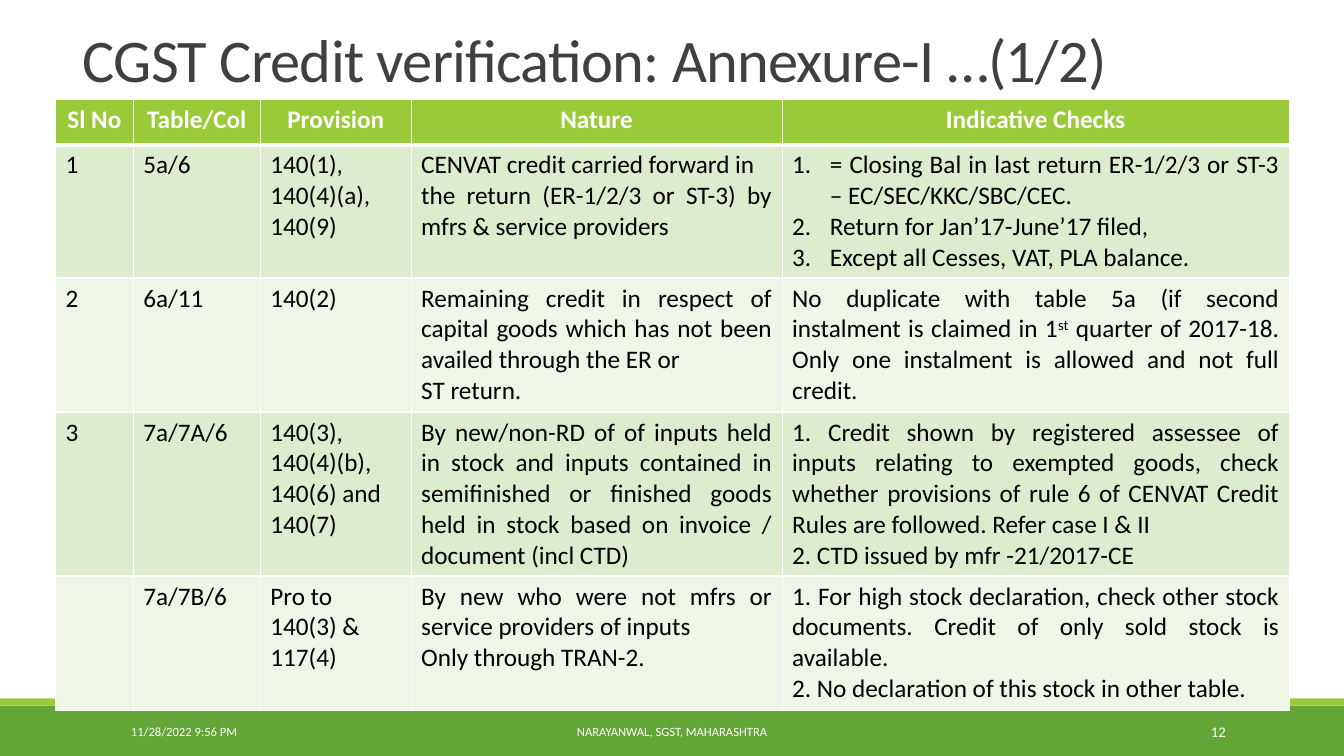
from lxml.etree import SubElement
from pptx import Presentation
from pptx.dml.color import RGBColor
from pptx.enum.shapes import MSO_SHAPE
from pptx.enum.text import MSO_ANCHOR, MSO_AUTO_SIZE, PP_ALIGN
from pptx.oxml.ns import qn
from pptx.util import Cm, Pt

COLORS = {
    "green": "63A537",
    "lime": "99CB38",
    "odd": "DEECCE",
    "even": "EFF6E8",
    "title": "404040",
    "black": "000000",
    "white": "FFFFFF",
}
FONT = "Calibri"
COL_WIDTHS = [1.96, 3.2, 3.8, 9.35, 12.78]
ROW_HEIGHTS = [1.14, 3.34, 3.38, 4.11, 3.38]
HEADERS = ["Sl No", "Table/Col", "Provision", "Nature", "Indicative Checks"]
NUMBERED = (1, 4)
ROWS = [
    ["1", "5a/6", "140(1),\n140(4)(a),\n140(9)",
     "CENVAT credit carried forward in\n"
     "the return (ER-1/2/3 or ST-3) by mfrs & service providers",
     "= Closing Bal in last return ER-1/2/3 or ST-3 – EC/SEC/KKC/SBC/CEC.\n"
     "Return for Jan’17-June’17 filed,\n"
     "Except all Cesses, VAT, PLA balance."],
    ["2", "6a/11", "140(2)",
     "Remaining credit in respect of capital goods which has not been "
     "availed through the ER or\nST return.",
     "No duplicate with table 5a (if second instalment is claimed in 1^st^ "
     "quarter of 2017-18. Only one instalment is allowed and not full credit."],
    ["3", "7a/7A/6", "140(3),\n140(4)(b),\n140(6) and\n140(7)",
     "By new/non-RD of of inputs held in stock and inputs contained in "
     "semifinished or finished goods held in stock based on invoice / "
     "document (incl CTD)",
     "1. Credit shown by registered assessee of inputs relating to exempted "
     "goods, check whether provisions of rule 6 of CENVAT Credit Rules are "
     "followed. Refer case I & II\n"
     "2. CTD issued by mfr -21/2017-CE"],
    ["", "7a/7B/6", "Pro to 140(3) & 117(4)",
     "By new who were not mfrs or service providers of inputs\n"
     "Only through TRAN-2.",
     "1. For high stock declaration, check other stock documents. Credit of "
     "only sold stock is available.\n"
     "2. No declaration of this stock in other table."],
]


def rgb(name):
    return RGBColor.from_string(COLORS[name])


def write(tf, text, size=18, color="black", bold=False, align=PP_ALIGN.LEFT,
          anchor=MSO_ANCHOR.TOP, line=1.0, spacing=0, numbered=False):
    tf.word_wrap = True
    tf.vertical_anchor = anchor
    for i, content in enumerate(text.split("\n")):
        p = tf.add_paragraph() if i else tf.paragraphs[0]
        p.alignment = align
        p.line_spacing = line
        if numbered:
            pPr = p._p.get_or_add_pPr()
            pPr.set("marL", str(Cm(0.95)))
            pPr.set("indent", str(-Cm(0.95)))
            SubElement(pPr, qn("a:buFont"), typeface="+mj-lt")
            SubElement(pPr, qn("a:buAutoNum"), type="arabicPeriod")
        for j, part in enumerate(content.split("^")):
            r = p.add_run()
            r.text = part
            r.font.name = FONT
            r.font.size = Pt(size)
            r.font.bold = bold
            r.font.color.rgb = rgb(color)
            if spacing:
                r._r.get_or_add_rPr().set("spc", str(spacing))
            if j % 2:
                r._r.get_or_add_rPr().set("baseline", "30000")


def add_band(s, top, height, color):
    sp = s.shapes.add_shape(MSO_SHAPE.RECTANGLE, 0, Cm(top), Cm(33.87), Cm(height))
    sp.shadow.inherit = False
    sp.fill.solid()
    sp.fill.fore_color.rgb = rgb(color)
    sp.line.fill.background()


def add_title(s, text):
    sp = s.shapes.title
    sp.left, sp.top, sp.width, sp.height = Cm(1.83), Cm(0.2), Cm(29.92), Cm(2.31)
    sp.text_frame.auto_size = MSO_AUTO_SIZE.NONE
    write(sp.text_frame, text, size=43.2, color="title",
          anchor=MSO_ANCHOR.BOTTOM, line=0.85, spacing=-50)


def add_footer(s, left, width, text, **fmt):
    sp = s.shapes.add_textbox(Cm(left), Cm(17.93), Cm(width), Cm(1.02))
    write(sp.text_frame, text, color="white", anchor=MSO_ANCHOR.MIDDLE, **fmt)


def set_borders(cell, row):
    widths = {"L": 1, "R": 1, "T": 3 if row == 1 else 1, "B": 3 if row == 0 else 1}
    tcPr = cell._tc.get_or_add_tcPr()
    for side, width in widths.items():
        ln = SubElement(tcPr, qn(f"a:ln{side}"), w=str(Pt(width)))
        fill = SubElement(ln, qn("a:solidFill"))
        SubElement(fill, qn("a:srgbClr"), val=COLORS["white"])


def add_checks_table(s):
    table = s.shapes.add_table(len(ROW_HEIGHTS), len(COL_WIDTHS), Cm(1.4), Cm(2.51),
                               Cm(sum(COL_WIDTHS)), Cm(sum(ROW_HEIGHTS))).table
    for col, width in zip(table.columns, COL_WIDTHS):
        col.width = Cm(width)
    for row, height in zip(table.rows, ROW_HEIGHTS):
        row.height = Cm(height)
    for i, texts in enumerate([HEADERS] + ROWS):
        for j, text in enumerate(texts):
            cell = table.cell(i, j)
            set_borders(cell, i)
            cell.fill.solid()
            if i == 0:
                cell.fill.fore_color.rgb = rgb("lime")
                write(cell.text_frame, text, color="white", bold=True,
                      align=PP_ALIGN.CENTER)
            else:
                cell.fill.fore_color.rgb = rgb("odd" if i % 2 else "even")
                if text:
                    write(cell.text_frame, text, numbered=(i, j) == NUMBERED,
                          align=PP_ALIGN.JUSTIFY if j > 2 else PP_ALIGN.LEFT)


def main():
    prs = Presentation()
    prs.slide_width, prs.slide_height = Cm(33.87), Cm(19.05)
    s = prs.slides.add_slide(prs.slide_layouts[5])
    add_band(s, 17.78, 1.27, "green")
    add_band(s, 17.6, 0.18, "lime")
    add_title(s, "CGST Credit verification: Annexure-I …(1/2)")
    add_checks_table(s)
    add_footer(s, 3.05, 6.86, "11/28/2022 9:56 PM", size=9)
    add_footer(s, 10.24, 13.39, "NARAYANWAL, SGST, MAHARASHTRA", size=9,
               align=PP_ALIGN.CENTER)
    add_footer(s, 27.51, 3.63, "12", size=10.5, align=PP_ALIGN.RIGHT)
    prs.save("out.pptx")


if __name__ == "__main__":
    main()
